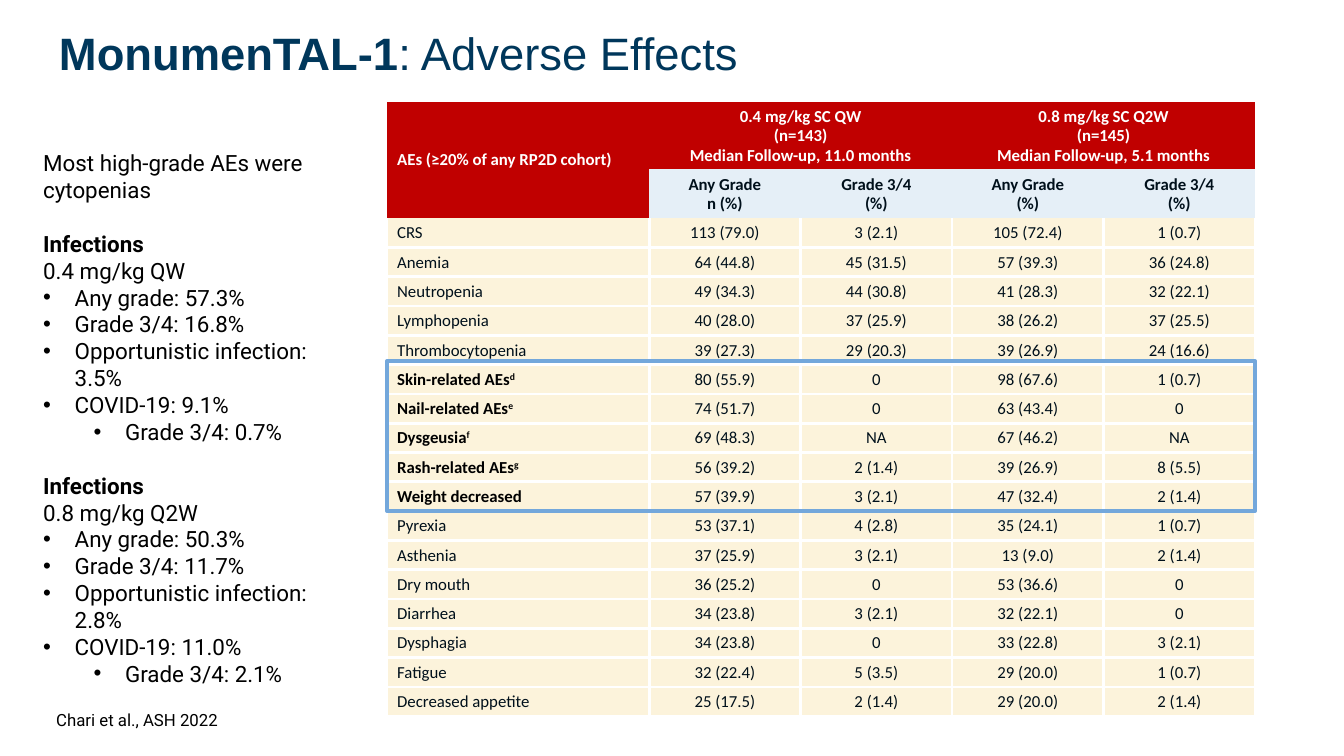
from lxml import etree
from pptx import Presentation
from pptx.dml.color import RGBColor
from pptx.enum import shapes, text
from pptx.oxml import ns
from pptx.util import Pt

NAVY = RGBColor(0x00, 0x37, 0x5B)
INK = RGBColor(0x00, 0x10, 0x1B)
BLACK = RGBColor(0x00, 0x00, 0x00)
WHITE = RGBColor(0xFF, 0xFF, 0xFF)
RED = RGBColor(0xC0, 0x00, 0x00)
PALE_BLUE = RGBColor(0xE5, 0xEF, 0xF7)
CREAM = RGBColor(0xFC, 0xF3, 0xDB)
FRAME_BLUE = RGBColor(0x73, 0xA7, 0xDB)

TITLE = ("MonumenTAL-1", ": Adverse Effects")
CITATION = "Chari et al., ASH 2022"
INTRO = "Most high-grade AEs were cytopenias"
INFECTIONS = [
    ("0.4 mg/kg QW", ["Any grade: 57.3%", "Grade 3/4: 16.8%",
                      "Opportunistic infection: 3.5%", "COVID-19: 9.1%"],
     "Grade 3/4: 0.7%"),
    ("0.8 mg/kg Q2W", ["Any grade: 50.3%", "Grade 3/4: 11.7%",
                       "Opportunistic infection: 2.8%", "COVID-19: 11.0%"],
     "Grade 3/4: 2.1%"),
]
CORNER = "AEs (≥20% of any RP2D cohort)"
COHORTS = [
    ["0.4 mg/kg SC QW", "(n=143)\nMedian Follow-up, 11.0 months"],
    ["0.8 mg/kg SC Q2W", "(n=145)\nMedian Follow-up, 5.1 months"],
]
SUBHEADS = [["Any Grade", "n (%)"], ["Grade 3/4", "(%)"],
            ["Any Grade", "(%)"], ["Grade 3/4", "(%)"]]
EFFECTS = [
    ("CRS", "113 (79.0)", "3 (2.1)", "105 (72.4)", "1 (0.7)"),
    ("Anemia", "64 (44.8)", "45 (31.5)", "57 (39.3)", "36 (24.8)"),
    ("Neutropenia", "49 (34.3)", "44 (30.8)", "41 (28.3)", "32 (22.1)"),
    ("Lymphopenia", "40 (28.0)", "37 (25.9)", "38 (26.2)", "37 (25.5)"),
    ("Thrombocytopenia", "39 (27.3)", "29 (20.3)", "39 (26.9)", "24 (16.6)"),
    ("Skin-related AEs", "80 (55.9)", "0", "98 (67.6)", "1 (0.7)"),
    ("Nail-related AEs", "74 (51.7)", "0", "63 (43.4)", "0"),
    ("Dysgeusia", "69 (48.3)", "NA", "67 (46.2)", "NA"),
    ("Rash-related AEs", "56 (39.2)", "2 (1.4)", "39 (26.9)", "8 (5.5)"),
    ("Weight decreased", "57 (39.9)", "3 (2.1)", "47 (32.4)", "2 (1.4)"),
    ("Pyrexia", "53 (37.1)", "4 (2.8)", "35 (24.1)", "1 (0.7)"),
    ("Asthenia", "37 (25.9)", "3 (2.1)", "13 (9.0)", "2 (1.4)"),
    ("Dry mouth", "36 (25.2)", "0", "53 (36.6)", "0"),
    ("Diarrhea", "34 (23.8)", "3 (2.1)", "32 (22.1)", "0"),
    ("Dysphagia", "34 (23.8)", "0", "33 (22.8)", "3 (2.1)"),
    ("Fatigue", "32 (22.4)", "5 (3.5)", "29 (20.0)", "1 (0.7)"),
    ("Decreased appetite", "25 (17.5)", "2 (1.4)", "29 (20.0)", "2 (1.4)"),
]
FOOTNOTES = {"Skin-related AEs": "d", "Nail-related AEs": "e",
             "Dysgeusia": "f", "Rash-related AEs": "g"}
HIGHLIGHTED = {*FOOTNOTES, "Weight decreased"}

TABLE_LEFT, TABLE_TOP = 276.5, 72.7
COLUMN_WIDTHS = [187.2] + [108.2] * 4
ROW_HEIGHTS = [47.6, 34.9] + [20.9] * len(EFFECTS)
FRAME_TOP, FRAME_HEIGHT = 258, 107
BULLET_INDENT, LEVEL_STEP = 22.5, 36
SIDE_LINE = 19.3


def write(p, content, *, font, size, color, bold=False, superscript=False):
    """Add formatted text to a paragraph, with a line break at each newline."""
    for i, line in enumerate(content.split("\n")):
        if i:
            p.add_line_break()
        r = p.add_run()
        r.text = line
        f = r.font
        f.name, f.size, f.bold = font, Pt(size), bold
        f.color.rgb = color
        if superscript:
            r._r.get_or_add_rPr().set("baseline", "30000")


def next_paragraph(tf):
    """Return the unused first paragraph, or add one."""
    first = tf.paragraphs[0]
    return tf.add_paragraph() if first.runs else first


def add_box(s, left, top, width, height):
    tf = s.shapes.add_textbox(Pt(left), Pt(top), Pt(width), Pt(height)).text_frame
    tf.word_wrap = True
    return tf


def add_bullet(p, level):
    pPr = p._p.get_or_add_pPr()
    pPr.set("marL", str(Pt(BULLET_INDENT + level * LEVEL_STEP)))
    pPr.set("indent", str(-Pt(BULLET_INDENT)))
    etree.SubElement(pPr, ns.qn("a:buFont")).set("typeface", "Arial")
    etree.SubElement(pPr, ns.qn("a:buChar")).set("char", "•")
    p.level = level


def set_borders(cell, sides):
    """Draw white lines on the given sides and none on the others."""
    tcPr = cell._tc.get_or_add_tcPr()
    for side in "LRTB":
        ln = etree.SubElement(tcPr, ns.qn(f"a:ln{side}"))
        if side in sides:
            ln.set("w", str(Pt(2.25)))
            fill = etree.SubElement(ln, ns.qn("a:solidFill"))
            etree.SubElement(fill, ns.qn("a:srgbClr")).set("val", str(WHITE))
        else:
            etree.SubElement(ln, ns.qn("a:noFill"))


def fill_cell(cell, lines, *, color=INK, bold=False, centred=True, note=None):
    cell.vertical_anchor = text.MSO_ANCHOR.MIDDLE
    for line in lines:
        p = next_paragraph(cell.text_frame)
        p.line_spacing = 0.95
        p.alignment = text.PP_ALIGN.CENTER if centred else text.PP_ALIGN.LEFT
        style = dict(font="Calibri", size=12, color=color, bold=bold)
        write(p, line, **style)
        if note:
            write(p, note, superscript=True, **style)


def add_title(s):
    tf = add_box(s, 32.7, 22.8, 759.6, 33.8)
    tf.vertical_anchor = text.MSO_ANCHOR.MIDDLE
    tf.margin_left = tf.margin_right = tf.margin_top = tf.margin_bottom = Pt(9.4)
    p = tf.paragraphs[0]
    p.line_spacing = 0.9
    for part, bold in zip(TITLE, (True, False)):
        write(p, part, font="Arial", size=32.4, color=NAVY, bold=bold)


def add_infections(s):
    tf = add_box(s, 23.8, 103, 239.8, 390)
    style = dict(font="Roboto", size=16, color=BLACK)
    write(next_paragraph(tf), INTRO, **style)
    for dose, rates, covid_detail in INFECTIONS:
        p = next_paragraph(tf)
        p.space_before = Pt(SIDE_LINE)
        write(p, "Infections", bold=True, **style)
        write(next_paragraph(tf), dose, **style)
        for item, level in [(rate, 0) for rate in rates] + [(covid_detail, 1)]:
            p = next_paragraph(tf)
            add_bullet(p, level)
            write(p, item, **style)


def add_effects_table(s):
    table = s.shapes.add_table(
        len(ROW_HEIGHTS), len(COLUMN_WIDTHS), Pt(TABLE_LEFT), Pt(TABLE_TOP),
        Pt(sum(COLUMN_WIDTHS)), Pt(sum(ROW_HEIGHTS))).table
    table.first_row = table.horz_banding = False
    for column, width in zip(table.columns, COLUMN_WIDTHS):
        column.width = Pt(width)
    for i, height in enumerate(ROW_HEIGHTS):
        table.rows[i].height = Pt(height)
        for j, cell in enumerate(table.rows[i].cells):
            set_borders(cell, "" if i < 2 else "LRB" if i == 2 else "LRTB")
            cell.fill.solid()
            is_red = i == 0 or (i == 1 and j == 0)
            cell.fill.fore_color.rgb = RED if is_red else PALE_BLUE if i == 1 else CREAM

    table.cell(0, 0).merge(table.cell(1, 0))
    fill_cell(table.cell(0, 0), [CORNER], color=WHITE, bold=True, centred=False)
    for k, cohort in enumerate(COHORTS):
        j = 1 + 2 * k
        table.cell(0, j).merge(table.cell(0, j + 1))
        fill_cell(table.cell(0, j), cohort, color=WHITE, bold=True)
    for j, subhead in enumerate(SUBHEADS, 1):
        fill_cell(table.cell(1, j), subhead, bold=True)
    for i, (effect, *values) in enumerate(EFFECTS, 2):
        marked = effect in HIGHLIGHTED
        fill_cell(table.cell(i, 0), [effect], color=BLACK if marked else INK,
                  bold=marked, centred=False, note=FOOTNOTES.get(effect))
        for j, value in enumerate(values, 1):
            fill_cell(table.cell(i, j), [value])


def add_highlight_frame(s):
    sp = s.shapes.add_shape(shapes.MSO_SHAPE.RECTANGLE, Pt(TABLE_LEFT), Pt(FRAME_TOP),
                            Pt(sum(COLUMN_WIDTHS)), Pt(FRAME_HEIGHT))
    sp.shadow.inherit = False
    sp.fill.background()
    sp.line.color.rgb = FRAME_BLUE
    sp.line.width = Pt(3)


def main():
    prs = Presentation()
    prs.slide_width, prs.slide_height = Pt(960), Pt(540)
    s = prs.slides.add_slide(prs.slide_layouts[6])
    add_title(s)
    citation = add_box(s, 33.1, 503.3, 434.2, 21.6)
    write(citation.paragraphs[0], CITATION, font="Roboto", size=12, color=BLACK)
    add_effects_table(s)
    add_infections(s)
    add_highlight_frame(s)
    prs.save("out.pptx")


if __name__ == "__main__":
    main()
